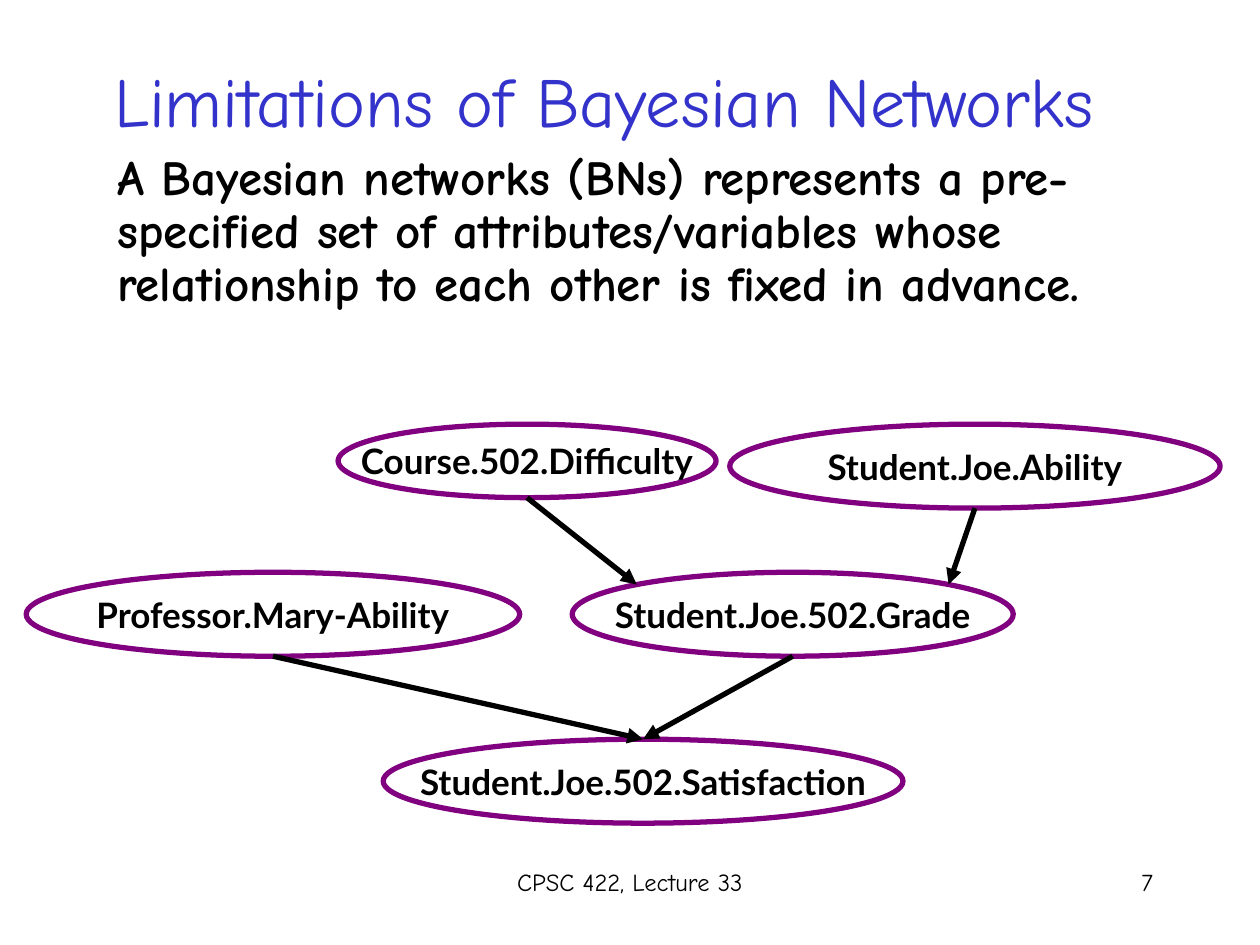
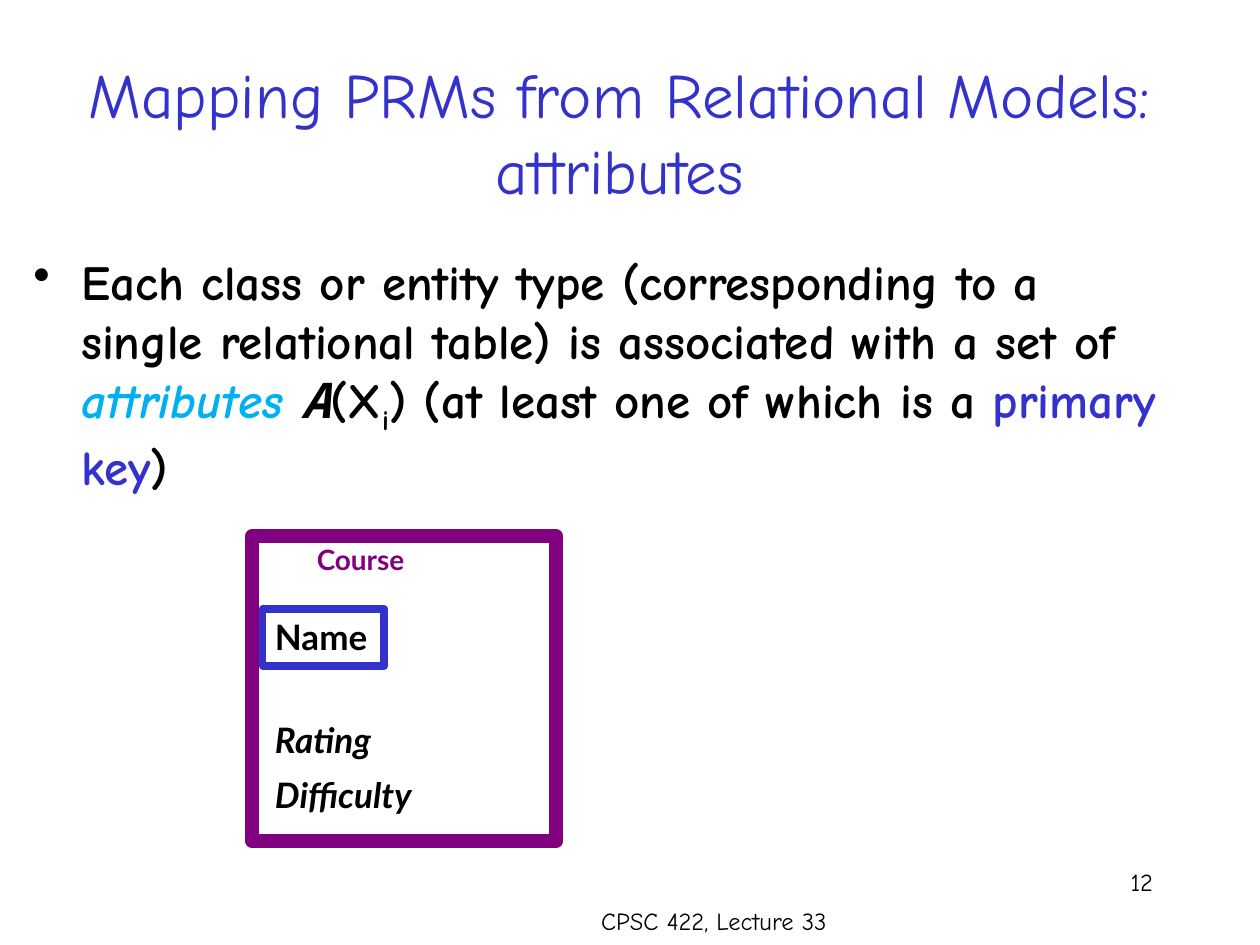
import dataclasses
import math

import lxml.etree
import pptx
import pptx.dml.color
import pptx.enum.shapes
import pptx.enum.text
import pptx.oxml.ns
import pptx.util

ALIGN = pptx.enum.text.PP_ALIGN
ANCHOR = pptx.enum.text.MSO_ANCHOR
SHAPE = pptx.enum.shapes.MSO_SHAPE
COLUMNS, ROWS = 120, 90
SLIDE_WIDTH, SLIDE_HEIGHT = pptx.util.Inches(10), pptx.util.Inches(7.5)


@dataclasses.dataclass(frozen=True)
class Theme:
    ink: str = "000000"
    paper: str = "FFFFFF"
    accent: str = "3333CC"
    outline: str = "800080"
    highlight: str = "00B0F0"
    prose: str = "Comic Neue"
    label: str = "Lato"
    symbol: str = "Noto Sans Mono"
    title_size: int = 40
    long_title_size: int = 36
    body_size: int = 28
    label_size: int = 20
    caption_size: int = 16
    footer_size: int = 14
    line_width: float = 3
    key_width: float = 4.5
    frame_width: float = 8


THEME = Theme()


@dataclasses.dataclass(frozen=True)
class Box:
    column: float
    row: float
    columns: float
    rows: float

    def inner(self, column, row, columns, rows):
        return Box(self.column + column, self.row + row, columns, rows)

    def point(self, across, down):
        return (round((self.column + across * self.columns) * SLIDE_WIDTH / COLUMNS),
                round((self.row + down * self.rows) * SLIDE_HEIGHT / ROWS))

    def emu(self):
        left, top = self.point(0, 0)
        right, bottom = self.point(1, 1)
        return left, top, right - left, bottom - top


def rgb(color):
    return pptx.dml.color.RGBColor.from_string(color)


def style_font(font, size, name, color, bold=False, italic=False):
    font.size = pptx.util.Pt(size)
    font.name = name
    font.color.rgb = rgb(color)
    font.bold = bold
    font.italic = italic


def write(shape, text, size, name, color=THEME.ink, align=ALIGN.LEFT,
          anchor=ANCHOR.TOP, wrap=True, bold=False, italic=False):
    frame = shape.text_frame
    frame.word_wrap = wrap
    frame.vertical_anchor = anchor
    paragraph = frame.paragraphs[0]
    paragraph.alignment = align
    if text:
        paragraph.add_run().text = text
    style_font(paragraph.font, size, name, color, bold, italic)
    return paragraph


def add_text(slide, box, text, size, name, **style):
    return write(slide.shapes.add_textbox(*box.emu()), text, size, name, **style)


def add_outlined(slide, kind, box, color, width, filled=True):
    shape = slide.shapes.add_shape(kind, *box.emu())
    shape.shadow.inherit = False
    if filled:
        shape.fill.solid()
        shape.fill.fore_color.rgb = rgb(THEME.paper)
    else:
        shape.fill.background()
    shape.line.color.rgb = rgb(color)
    shape.line.width = pptx.util.Pt(width)
    return shape


def add_title(slide, box, text, size):
    add_text(slide, box, text, size, THEME.prose, color=THEME.accent,
             align=ALIGN.CENTER, anchor=ANCHOR.MIDDLE)


def add_footer(slide, course_box, number):
    add_text(slide, course_box, "CPSC 422, Lecture 33", THEME.footer_size,
             THEME.prose, align=ALIGN.CENTER)
    add_text(slide, Box(86, 82, 25, 6), str(number), THEME.footer_size,
             THEME.prose, align=ALIGN.RIGHT)


def add_body(slide, box, text=""):
    paragraph = add_text(slide, box, text, THEME.body_size, THEME.prose, bold=True)
    paragraph.space_before = pptx.util.Pt(0.2 * THEME.body_size)
    return paragraph


def add_bullet(paragraph, indent):
    properties = paragraph._p.get_or_add_pPr()
    properties.set("marL", str(indent))
    properties.set("indent", str(-indent))
    bullet = lxml.etree.Element(pptx.oxml.ns.qn("a:buChar"), char="•")
    properties.insert_element_before(bullet, "a:tabLst", "a:defRPr", "a:extLst")


def add_arrow(slide, start, end):
    arrow = slide.shapes.add_connector(
        pptx.enum.shapes.MSO_CONNECTOR.STRAIGHT, *start, *end)
    arrow.line.color.rgb = rgb(THEME.ink)
    arrow.line.width = pptx.util.Pt(THEME.line_width)
    lxml.etree.SubElement(arrow.line._get_or_add_ln(),
                          pptx.oxml.ns.qn("a:tailEnd"), type="triangle")
    lxml.etree.SubElement(arrow._element.spPr, pptx.oxml.ns.qn("a:effectLst"))
    return arrow


def add_network(slide, area):
    upper, middle, lower = 0, 14.1, 30
    nodes = {
        "Course.502.Difficulty": area.inner(29.7, upper, 36, 7),
        "Professor.Mary-Ability": area.inner(0, middle, 47, 8),
        "Student.Joe.Ability": area.inner(67, upper, 46.7, 8),
        "Student.Joe.502.Grade": area.inner(52, middle, 42, 8),
        "Student.Joe.502.Satisfaction": area.inner(34, lower, 49.5, 8),
    }
    ellipses = {}
    for name, box in nodes.items():
        ellipses[name] = add_outlined(slide, SHAPE.OVAL, box, THEME.outline,
                                      THEME.line_width)
        write(ellipses[name], name, THEME.label_size, THEME.label,
              align=ALIGN.CENTER, anchor=ANCHOR.MIDDLE, wrap=False, bold=True)

    diagonal = (1 - math.sqrt(0.5)) / 2
    grade = "Student.Joe.502.Grade"
    satisfaction = "Student.Joe.502.Satisfaction"
    influences = [
        ("Course.502.Difficulty", grade, diagonal, diagonal),
        ("Student.Joe.Ability", grade, 1 - diagonal, diagonal),
        (grade, satisfaction, 0.5, 0),
        ("Professor.Mary-Ability", satisfaction, 0.5, 0),
    ]
    for cause, effect, across, down in influences:
        arrow = add_arrow(slide, nodes[cause].point(0.5, 1),
                          nodes[effect].point(across, down))
        if down == 0:
            arrow.end_connect(ellipses[effect], 0)


def add_class_table(slide, area):
    add_outlined(slide, SHAPE.RECTANGLE, area, THEME.outline, THEME.frame_width)
    add_text(slide, area.inner(5, 0, 17, 6), "Course", THEME.caption_size,
             THEME.label, color=THEME.outline, bold=True)
    attributes = [("Rating", 16.7, 12.5), ("Difficulty", 22, 16.4)]
    for attribute, row, columns in attributes:
        add_text(slide, area.inner(1, row, columns, 5.2), attribute,
                 THEME.label_size, THEME.label, wrap=False, bold=True, italic=True)
    primary_key = add_outlined(slide, SHAPE.RECTANGLE, area.inner(1, 6.9, 11.6, 5.4),
                               THEME.accent, THEME.key_width, filled=False)
    write(primary_key, "Name", THEME.label_size, THEME.label, wrap=False, bold=True)


def add_definition(slide, box):
    paragraph = add_body(slide, box)
    add_bullet(paragraph, pptx.util.Inches(0.38))
    phrases = [
        ("Each class or entity type (corresponding to a single relational table) "
         "is associated with a set of ", {}),
        ("attributes ", {"color": THEME.highlight, "italic": True}),
        ("A", {"name": THEME.symbol, "italic": True}),
        ("(X", {}),
        ("i", {"subscript": True}),
        (") (at least one of which is a ", {}),
        ("primary key", {"color": THEME.accent}),
        (")", {}),
    ]
    for text, style in phrases:
        run = paragraph.add_run()
        run.text = text
        if "color" in style:
            run.font.color.rgb = rgb(style["color"])
        if "name" in style:
            run.font.name = style["name"]
        if "italic" in style:
            run.font.italic = True
        if "subscript" in style:
            run._r.get_or_add_rPr().set("baseline", "-25000")


def build_limitations(slide):
    add_title(slide, Box(-2, 2, 119, 15), "Limitations of Bayesian Networks",
              THEME.title_size)
    statement = add_body(
        slide, Box(10, 14, 102, 38),
        "A Bayesian networks (BNs) represents a pre-specified set of "
        "attributes/variables whose relationship to each other is fixed in advance.")
    statement.line_spacing = 0.9
    add_network(slide, Box(2.5, 40.4, 114, 38))
    add_footer(slide, Box(41, 82, 38, 6), 7)


def build_mapping(slide):
    add_title(slide, Box(0, 5, 118, 15),
              "Mapping PRMs from Relational Models: attributes",
              THEME.long_title_size)
    add_definition(slide, Box(2, 23.4, 110, 55))
    add_class_table(slide, Box(24, 51.1, 29, 29))
    add_footer(slide, Box(49, 85.7, 38, 4.3), 12)


def main():
    presentation = pptx.Presentation()
    presentation.slide_width = SLIDE_WIDTH
    presentation.slide_height = SLIDE_HEIGHT
    blank = presentation.slide_layouts[6]
    for build in (build_limitations, build_mapping):
        build(presentation.slides.add_slide(blank))
    presentation.save("out.pptx")


if __name__ == "__main__":
    main()
